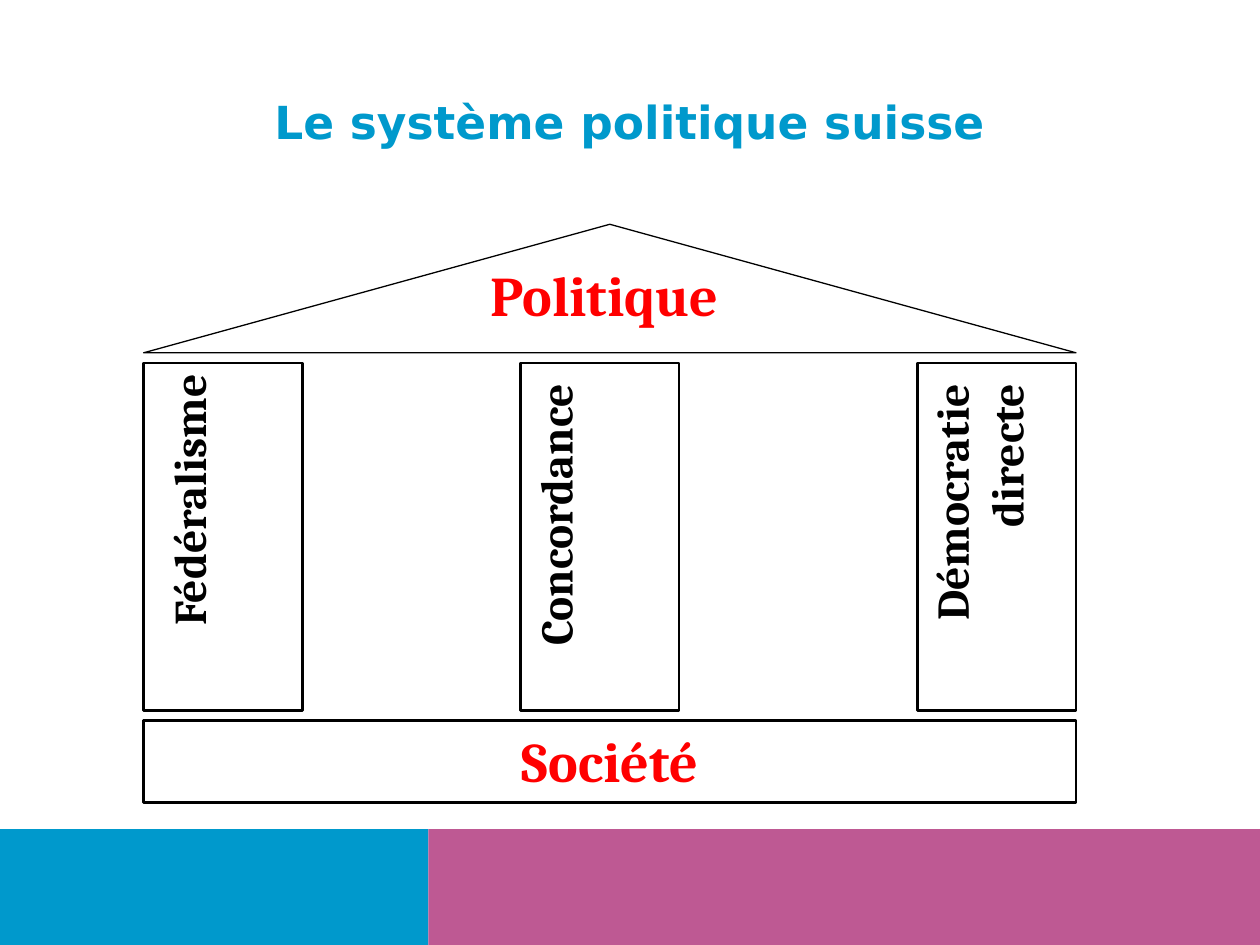
"""Build the slide on the Swiss political system as a temple of three pillars."""
import pptx
import pptx.util
import pptx.dml.color
import pptx.enum.shapes
import pptx.enum.text

Inches, Pt = pptx.util.Inches, pptx.util.Pt
Kind = pptx.enum.shapes.MSO_SHAPE
Align = pptx.enum.text.PP_ALIGN
Anchor = pptx.enum.text.MSO_ANCHOR

COLORS = {"blue": "0099CC", "pink": "BE5993", "red": "FF0000",
          "black": "000000", "white": "FFFFFF"}
TITLE = "Le système politique suisse"
ROOF = "Politique"
BASE = "Société"
# pillar left, label, label centre x, label length, label depth
PILLARS = [
    (1.14, "Fédéralisme", 1.49, 2.76, 0.53),
    (4.13, "Concordance", 4.4, 2.6, 0.53),
    (7.28, "Démocratie directe", 7.77, 2.6, 0.98),
]
BANDS = [(0, 3.4, "blue"), (3.4, 6.6, "pink")]
LEFT, WIDTH = 1.14, 7.4
TOP, WIDE, TALL = 2.88, 1.26, 2.76
MIDDLE = 4.25


def paint(name):
    return pptx.dml.color.RGBColor.from_string(COLORS[name])


def write(shape, text, size=26, color="black", font="Cambria",
          align=Align.CENTER, anchor=Anchor.TOP):
    frame = shape.text_frame
    frame.word_wrap = True
    frame.vertical_anchor = anchor
    para = frame.paragraphs[0]
    para.alignment = align
    para.space_before = Pt(0)
    run = para.add_run()
    run.text = text
    run.font.size = Pt(size)
    run.font.bold = True
    run.font.name = font
    run.font.color.rgb = paint(color)


def draw(slide, kind, box, fill=None, line=None):
    shape = slide.shapes.add_shape(kind, *map(Inches, box))
    shape.shadow.inherit = False
    if fill:
        shape.fill.solid()
        shape.fill.fore_color.rgb = paint(fill)
    else:
        shape.fill.background()
    if line:
        shape.line.color.rgb = paint("black")
        shape.line.width = Pt(line)
    else:
        shape.line.fill.background()
    return shape


def label(slide, box, text, turn=0, **style):
    shape = slide.shapes.add_textbox(*map(Inches, box))
    shape.rotation = turn
    write(shape, text, **style)


def main():
    deck = pptx.Presentation()
    deck.slide_width, deck.slide_height = Inches(10), Inches(7.5)
    slide = deck.slides.add_slide(deck.slide_layouts[5])

    for left, width, color in BANDS:
        draw(slide, Kind.RECTANGLE, (left, 6.58, width, 0.92), fill=color)

    title = slide.shapes.title
    title.left, title.top, title.width, title.height = map(
        Inches, (0.82, 0.54, 8.36, 0.84))
    title.fill.solid()
    title.fill.fore_color.rgb = paint("white")
    write(title, TITLE, color="blue", font="DejaVu Sans", anchor=Anchor.MIDDLE)

    base = draw(slide, Kind.RECTANGLE, (LEFT, 5.72, WIDTH, 0.65), line=1.5)
    write(base, BASE, size=32, color="red")

    for left, text, center, length, depth in PILLARS:
        box = (center - length / 2, MIDDLE - depth / 2, length, depth)
        label(slide, box, text, turn=270, align=Align.RIGHT)
        draw(slide, Kind.RECTANGLE, (left, TOP, WIDE, TALL), line=1.5)

    draw(slide, Kind.ISOSCELES_TRIANGLE, (LEFT, 1.78, WIDTH, 1.02), line=0.75)
    label(slide, (3.5, 2.02, 2.6, 0.63), ROOF, size=32, color="red")
    deck.save("out.pptx")


if __name__ == "__main__":
    main()
